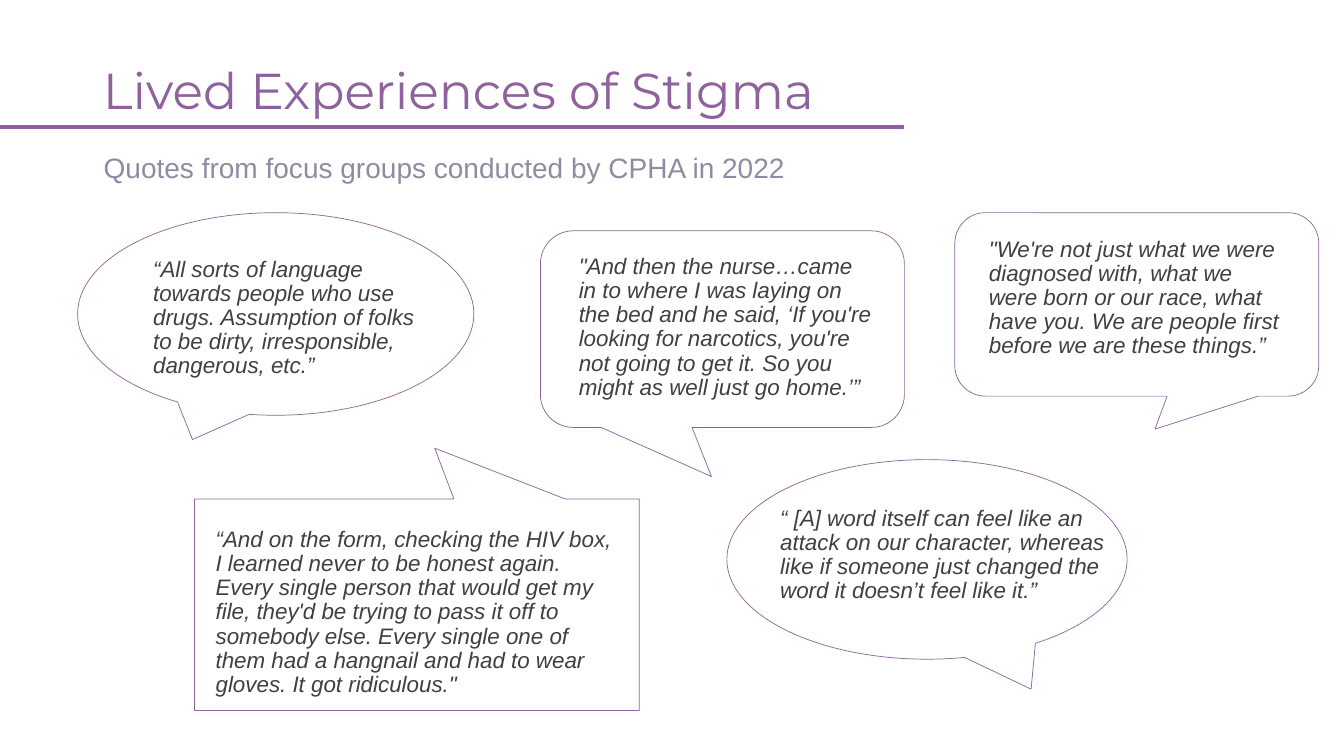
from dataclasses import dataclass

from pptx import Presentation
from pptx.dml.color import RGBColor
from pptx.enum import shapes, text
from pptx.oxml import ns, xmlchemy
from pptx.util import Inches, Pt

SHAPE = shapes.MSO_SHAPE


@dataclass(frozen=True)
class Theme:
    purple: RGBColor = RGBColor(0x8F, 0x62, 0x9E)
    muted: RGBColor = RGBColor(0x92, 0x8A, 0xA2)
    ink: RGBColor = RGBColor(0x40, 0x40, 0x40)
    white: RGBColor = RGBColor(0xFF, 0xFF, 0xFF)
    heading_font: str = "Montserrat"
    body_font: str = "Arial"
    title_size: int = 36
    subtitle_size: int = 20
    quote_size: int = 16
    line_spacing: float = 0.9


THEME = Theme()

# Each quote: callout preset, callout box, tail tip from the centre, text box, words
NURSE_QUOTE = (
    SHAPE.ROUNDED_RECTANGULAR_CALLOUT, (5.36, 2.29, 3.61, 1.95), (-0.03, 0.75),
    (5.64, 2.48, 3.14, 1.96),
    "\"And then the nurse…came in to where I was laying on the bed and he said, "
    "‘If you're looking for narcotics, you're not going to get it. So you might "
    "as well just go home.’”",
)
OTHER_QUOTES = [
    (SHAPE.RECTANGULAR_CALLOUT, (1.93, 4.95, 4.41, 2.1), (0.04, -0.74),
     (2.04, 5.19, 4.18, 1.73),
     "“And on the form, checking the HIV box, I learned never to be honest again. "
     "Every single person that would get my file, they'd be trying to pass it off "
     "to somebody else. Every single one of them had a hangnail and had to wear "
     "gloves. It got ridiculous.\""),
    (SHAPE.OVAL_CALLOUT, (0.77, 2.11, 3.93, 2.01), (-0.21, 0.62),
     (1.42, 2.51, 2.99, 1.6),
     "“All sorts of language towards people who use drugs. Assumption of folks to "
     "be dirty, irresponsible, dangerous, etc.”"),
    (SHAPE.ROUNDED_RECTANGULAR_CALLOUT, (9.47, 2.11, 3.61, 1.82), (0.05, 0.68),
     (9.71, 2.31, 3.14, 1.36),
     "\"We're not just what we were diagnosed with, what we were born or our race, "
     "what have you. We are people first before we are these things.”"),
    (SHAPE.OVAL_CALLOUT, (7.21, 4.56, 3.97, 1.98), (0.26, 0.65),
     (7.64, 4.98, 3.46, 1.96),
     "“ [A] word itself can feel like an attack on our character, whereas like if "
     "someone just changed the word it doesn’t feel like it.”"),
]


def place(shape, box):
    shape.left, shape.top, shape.width, shape.height = map(Inches, box)


def remove_bullet(paragraph):
    properties = paragraph._p.get_or_add_pPr()
    properties.set("marL", "0")
    properties.set("indent", "0")
    properties.append(xmlchemy.OxmlElement("a:buNone"))


def write(shape, words, font_name, size, color, italic=False, line_spacing=None,
          anchor=text.MSO_ANCHOR.TOP):
    frame = shape.text_frame
    frame.text = words
    frame.word_wrap = True
    frame.auto_size = text.MSO_AUTO_SIZE.NONE
    frame.vertical_anchor = anchor
    paragraph = frame.paragraphs[0]
    if shape.is_placeholder:
        remove_bullet(paragraph)
    paragraph.alignment = text.PP_ALIGN.LEFT
    paragraph.space_before = Pt(0)
    paragraph.line_spacing = line_spacing
    font = paragraph.font
    font.name, font.size, font.italic = font_name, Pt(size), italic
    font.color.rgb = color


def add_text_box(slide, box):
    return slide.shapes.add_textbox(*map(Inches, box))


def add_heading(slide, box):
    """Title, the rule under it and the subtitle, all set out from the title box."""
    left, top, width, height = box
    place(slide.shapes.title, box)
    write(slide.shapes.title, "Lived Experiences of Stigma", THEME.heading_font,
          THEME.title_size, THEME.purple, line_spacing=THEME.line_spacing,
          anchor=text.MSO_ANCHOR.MIDDLE)

    subtitle = add_text_box(slide, (left + 0.01, top + height - 0.01, width, 0.44))
    write(subtitle, "Quotes from focus groups conducted by CPHA in 2022",
          THEME.body_font, THEME.subtitle_size, THEME.muted)

    rule_y = Inches(top + 0.86)
    rule = slide.shapes.add_connector(
        shapes.MSO_CONNECTOR.STRAIGHT, 0, rule_y, Inches(8.97), rule_y)
    rule.line.color.rgb = THEME.purple
    rule.line.width = Pt(2.25)
    rule._element.find(ns.qn("p:spPr")).append(xmlchemy.OxmlElement("a:effectLst"))


def add_callout(slide, preset, box, tail):
    callout = slide.shapes.add_shape(preset, *map(Inches, box))
    callout.adjustments[0], callout.adjustments[1] = tail
    callout.shadow.inherit = False
    callout.fill.solid()
    callout.fill.fore_color.rgb = THEME.white
    callout.line.color.rgb = THEME.purple
    callout.line.width = Pt(0.5)


def add_quote(slide, quote, placeholder=None):
    """A callout with its words in front, in the placeholder if one is given."""
    preset, box, tail, text_box, words = quote
    add_callout(slide, preset, box, tail)
    if placeholder is None:
        holder = add_text_box(slide, text_box)
    else:
        holder = placeholder
        place(holder, text_box)
        slide.shapes.element.append(holder.element)
    write(holder, words, THEME.body_font, THEME.quote_size, THEME.ink,
          italic=True, line_spacing=THEME.line_spacing)


def build_quotes_slide(presentation):
    slide = presentation.slides.add_slide(presentation.slide_layouts[1])
    body = slide.placeholders[1]
    add_heading(slide, (0.92, 0.4, 11.5, 1.05))
    add_quote(slide, NURSE_QUOTE, body)
    for quote in OTHER_QUOTES:
        add_quote(slide, quote)


def main():
    presentation = Presentation()
    presentation.slide_width = Inches(13.33)
    presentation.slide_height = Inches(7.5)
    build_quotes_slide(presentation)
    presentation.save("out.pptx")


if __name__ == "__main__":
    main()
